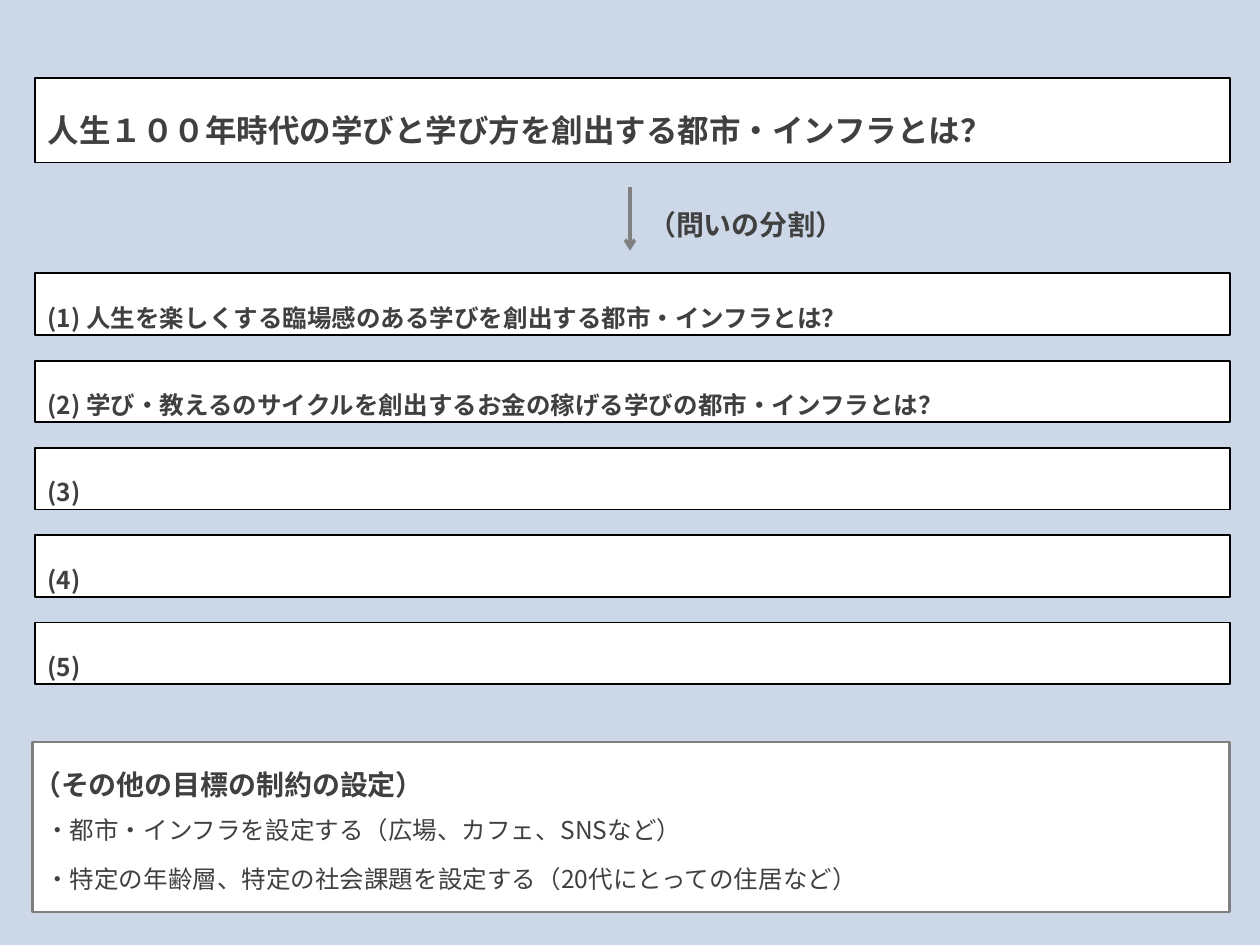
from lxml.etree import SubElement
from pptx import Presentation
from pptx.dml.color import RGBColor
from pptx.enum.shapes import MSO_CONNECTOR as Connector, MSO_SHAPE as Shape
from pptx.enum.text import MSO_ANCHOR as Anchor, MSO_AUTO_SIZE as AutoSize, PP_ALIGN as Align
from pptx.oxml.ns import qn
from pptx.util import Inches, Pt

FONT = "Noto Sans CJK JP"
BACKGROUND = RGBColor(0xCC, 0xD8, 0xE7)
WHITE = RGBColor(0xFF, 0xFF, 0xFF)
BLACK = RGBColor(0, 0, 0)
GRAY = RGBColor(0x80, 0x80, 0x80)
INK = RGBColor(0x40, 0x40, 0x40)

WIDTH, HEIGHT = Inches(10), Inches(7.5)

# Regions as shares of the slide: left, top, width, height (percent)
TITLE_BOX = (2.8, 8.27, 94.8, 8.93)
DIVISION_BOX = (49.2, 19.33, 20, 7.2)
QUESTIONS_BOX = (2.8, 28.93, 94.8, 43.47)
CONSTRAINTS_BOX = (2.6, 78.53, 95, 18)

QUESTIONS = [
    "(1) 人生を楽しくする臨場感のある学びを創出する都市・インフラとは？",
    "(2) 学び・教えるのサイクルを創出するお金の稼げる学びの都市・インフラとは？",
    "(3)",
    "(4)",
    "(5)",
]
CONSTRAINTS = [
    "・都市・インフラを設定する（広場、カフェ、SNSなど）",
    "・特定の年齢層、特定の社会課題を設定する（20代にとっての住居など）",
]


def region(percents):
    """Turn percentages of the slide into lengths."""
    return [int(side * share / 100)
            for side, share in zip((WIDTH, HEIGHT) * 2, percents)]


def part(box, x, y, w, h):
    """Box inside another one, given as shares of it."""
    left, top, width, height = box
    return [int(left + x * width), int(top + y * height),
            int(w * width), int(h * height)]


def move(shape, box):
    shape.left, shape.top, shape.width, shape.height = box


def frame(shape, color, weight):
    shape.fill.solid()
    shape.fill.fore_color.rgb = WHITE
    shape.line.color.rgb = color
    shape.line.width = Pt(weight)


def add_panel(slide, box, color, weight):
    panel = slide.shapes.add_shape(Shape.RECTANGLE, *box)
    panel.shadow.inherit = False
    frame(panel, color, weight)
    return panel


def write(shape, lines, size, bold=True, spacing=32, align=Align.LEFT):
    text = shape.text_frame
    text.text = "\n".join(lines)
    text.word_wrap = True
    text.auto_size = AutoSize.NONE
    text.vertical_anchor = Anchor.MIDDLE
    for paragraph in text.paragraphs:
        paragraph.alignment = align
        paragraph.line_spacing = Pt(spacing)
        paragraph.space_before = Pt(0)
        for run in paragraph.runs:
            font = run.font
            font.name, font.size, font.bold = FONT, Pt(size), bold
            font.color.rgb = INK
            SubElement(run._r.get_or_add_rPr(), qn("a:ea"), typeface=FONT)


def add_title(slide, box):
    title = slide.shapes.title
    move(title, box)
    frame(title, BLACK, 1)
    write(title, ["人生１００年時代の学びと学び方を創出する都市・インフラとは？"], 18)


def add_division(slide, box):
    # Arrow down from the main question
    x, top, _, height = part(box, 0.04, 0.07, 0, 0.93)
    arrow = slide.shapes.add_connector(Connector.STRAIGHT, x, top, x, top + height)
    arrow.line.color.rgb = GRAY
    arrow.line.width = Pt(2)
    SubElement(arrow.line._get_or_add_ln(), qn("a:tailEnd"), type="arrow")
    SubElement(arrow._element.spPr, qn("a:effectLst"))

    label = slide.shapes.add_textbox(*part(box, 0, 0, 1, 0.89))
    write(label, ["（問いの分割）"], 16, align=Align.CENTER)


def add_questions(slide, box):
    row = 0.15
    step = (1 - row) / (len(QUESTIONS) - 1)
    for index, question in enumerate(QUESTIONS):
        panel = add_panel(slide, part(box, 0, index * step, 1, row), BLACK, 1)
        write(panel, [question], 14)


def add_constraints(slide, box):
    panel = add_panel(slide, box, GRAY, 1.5)

    # The list sits in front of its panel
    constraints = slide.placeholders[1]
    constraints._element.addprevious(panel._element)
    move(constraints, part(box, 0, 0.2, 0.99, 0.8))
    write(constraints, CONSTRAINTS, 14, bold=False, spacing=28)
    for paragraph in constraints.text_frame.paragraphs:
        properties = paragraph._p.get_or_add_pPr()
        properties.set("marL", "0")
        properties.set("indent", "0")
        SubElement(properties, qn("a:buNone"))

    heading = slide.shapes.add_textbox(*part(box, -0.01, 0, 0.78, 0.36))
    write(heading, ["（その他の目標の制約の設定）"], 16)


def main():
    deck = Presentation()
    deck.slide_width, deck.slide_height = WIDTH, HEIGHT
    slide = deck.slides.add_slide(deck.slide_layouts[1])
    slide.background.fill.solid()
    slide.background.fill.fore_color.rgb = BACKGROUND

    add_title(slide, region(TITLE_BOX))
    add_division(slide, region(DIVISION_BOX))
    add_questions(slide, region(QUESTIONS_BOX))
    add_constraints(slide, region(CONSTRAINTS_BOX))
    deck.save("out.pptx")


if __name__ == "__main__":
    main()
